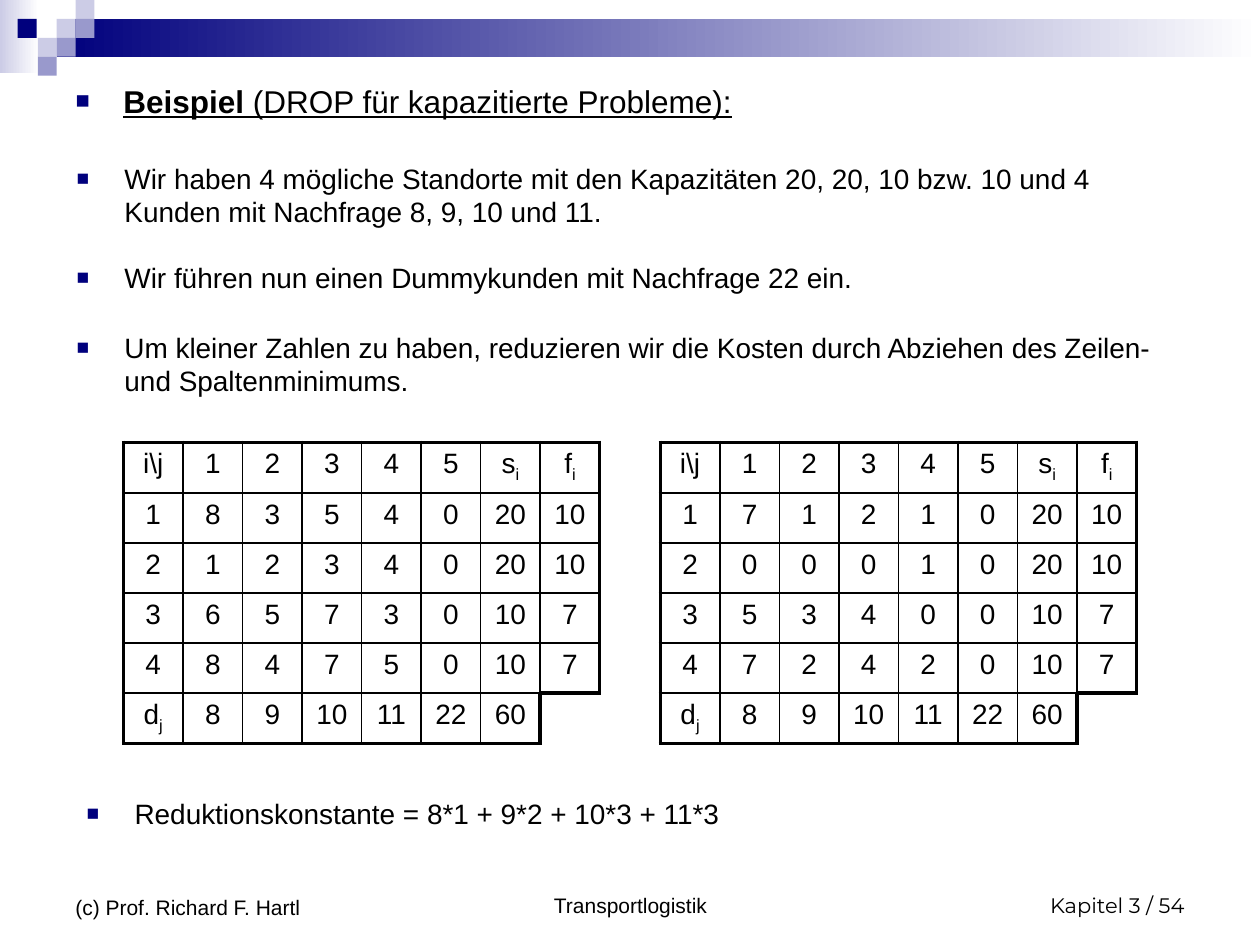
import dataclasses

import lxml.etree
import pptx
import pptx.dml.color
import pptx.enum.shapes
import pptx.enum.text
import pptx.oxml.ns
import pptx.util

Inches = pptx.util.Inches
ALIGN = pptx.enum.text.PP_ALIGN
ANCHOR = pptx.enum.text.MSO_ANCHOR


@dataclasses.dataclass(frozen=True)
class Theme:
    ink: str = "000000"
    navy: str = "00007D"
    violet: str = "9999CC"
    lilac: str = "CCCCE6"
    white: str = "FFFFFF"
    font: str = "Arial"
    number_font: str = "Montserrat"
    heading_size: int = 18
    body_size: int = 16
    footer_size: int = 12
    thick: float = 2.25
    thin: float = 1


def rgb(color):
    return pptx.dml.color.RGBColor.from_string(color)


def add_xml(parent, tag, **attributes):
    return lxml.etree.SubElement(parent, pptx.oxml.ns.qn(tag), attributes)


def apply_formats(target, values):
    for attribute, value in values.items():
        setattr(target, attribute, value)


class SlideBuilder:
    def __init__(self, slide, theme):
        self.slide = slide
        self.theme = theme

    def add_text(self, paragraph, text, size, font=None, subscript=False, **formats):
        run = paragraph.add_run()
        run.text = text
        run.font.color.rgb = rgb(self.theme.ink)
        apply_formats(run.font, {"name": font or self.theme.font,
                                 "size": pptx.util.Pt(size), **formats})
        if subscript:
            run.font._element.set("baseline", "-25000")

    def space_before(self, paragraph):
        spacing = add_xml(paragraph._p.get_or_add_pPr(), "a:spcBef")
        add_xml(spacing, "a:spcPct", val="20000")

    def bullet(self, paragraph):
        properties = paragraph._p.get_or_add_pPr()
        indent = Inches(0.38)
        properties.set("marL", str(indent))
        properties.set("indent", str(-indent))
        self.space_before(paragraph)
        color = add_xml(properties, "a:buClr")
        add_xml(color, "a:srgbClr", val=self.theme.navy)
        add_xml(properties, "a:buSzPct", val="75000")
        add_xml(properties, "a:buFont", typeface=self.theme.font)
        add_xml(properties, "a:buChar", char="■")

    def block(self, color, left, top, width, height, fade=False):
        block = self.slide.shapes.add_shape(
            pptx.enum.shapes.MSO_SHAPE.RECTANGLE,
            Inches(left), Inches(top), Inches(width), Inches(height))
        block.shadow.inherit = False
        block.line.fill.background()
        if fade:
            block.fill.gradient()
            block.fill.gradient_angle = 0
            for stop, shade, position in zip(
                    block.fill.gradient_stops, (color, self.theme.white), (0, 1)):
                stop.color.rgb = rgb(shade)
                stop.position = position
        else:
            block.fill.solid()
            block.fill.fore_color.rgb = rgb(color)

    def heading(self, strong, rest, left, top, width, height):
        title = self.slide.shapes.title
        apply_formats(title, {"left": Inches(left), "top": Inches(top),
                              "width": Inches(width), "height": Inches(height)})
        apply_formats(title.text_frame, {
            "vertical_anchor": ANCHOR.TOP, "word_wrap": True,
            "auto_size": pptx.enum.text.MSO_AUTO_SIZE.NONE})
        paragraph = title.text_frame.paragraphs[0]
        paragraph.alignment = ALIGN.LEFT
        self.bullet(paragraph)
        for text, bold in ((strong, True), (rest, False)):
            self.add_text(paragraph, text, self.theme.heading_size, bold=bold, underline=True)

    def text_box(self, left, top, width, height, anchor, align):
        box = self.slide.shapes.add_textbox(
            Inches(left), Inches(top), Inches(width), Inches(height))
        apply_formats(box.text_frame, {"word_wrap": True, "vertical_anchor": anchor})
        paragraph = box.text_frame.paragraphs[0]
        paragraph.alignment = align
        return paragraph

    def statement(self, text, left, top, height):
        paragraph = self.text_box(left, top, 9, height, ANCHOR.TOP, ALIGN.LEFT)
        self.bullet(paragraph)
        self.add_text(paragraph, text, self.theme.body_size)

    def footer(self, text, left, width, height, align, font=None):
        paragraph = self.text_box(left, 6.83, width, height, ANCHOR.BOTTOM, align)
        self.add_text(paragraph, text, self.theme.footer_size, font)

    def border(self, cell, widths):
        properties = cell._tc.get_or_add_tcPr()
        for side, width in zip("LRTB", widths):
            line = add_xml(properties, f"a:ln{side}", w=str(pptx.util.Pt(width)))
            if width:
                fill = add_xml(line, "a:solidFill")
                add_xml(fill, "a:srgbClr", val=self.theme.ink)
            else:
                add_xml(line, "a:noFill")

    def cost_table(self, rows, left, top, width, height):
        row_count, column_count = len(rows), len(rows[0])
        table = self.slide.shapes.add_table(
            row_count, column_count, Inches(left), Inches(top),
            Inches(width), Inches(height)).table
        apply_formats(table, {"first_row": False, "horz_banding": False})
        last_row, last_column = row_count - 1, column_count - 1
        thick, thin = self.theme.thick, self.theme.thin
        for r, row in enumerate(rows):
            for c, label in enumerate(row):
                cell = table.cell(r, c)
                right_edge = c == last_column or (r, c) == (last_row, last_column - 1)
                bottom_edge = r == last_row or (r, c) == (last_row - 1, last_column)
                if (r, c) == (last_row, last_column):
                    widths = (thick, 0, thick, 0)
                else:
                    widths = [thick if edge else thin
                              for edge in (c == 0, right_edge, r == 0, bottom_edge)]
                self.border(cell, widths)
                cell.fill.background()
                paragraph = cell.text_frame.paragraphs[0]
                paragraph.alignment = ALIGN.CENTER
                self.space_before(paragraph)
                base, _, index = str(label).partition("_")
                if base:
                    self.add_text(paragraph, base, self.theme.body_size)
                if index:
                    self.add_text(paragraph, index, self.theme.body_size, subscript=True)


def with_margins(costs):
    supplies, fixed_costs = (20, 20, 10, 10), (10, 10, 7, 7)
    header = ["i\\j", 1, 2, 3, 4, 5, "s_i", "f_i"]
    sites = [[i, *row, s, f] for i, (row, s, f)
             in enumerate(zip(costs, supplies, fixed_costs), 1)]
    return [header, *sites, ["d_j", 8, 9, 10, 11, 22, 60, ""]]


def main():
    deck = pptx.Presentation()
    apply_formats(deck, {"slide_width": Inches(10), "slide_height": Inches(7.5)})
    theme = Theme()
    builder = SlideBuilder(deck.slides.add_slide(deck.slide_layouts[5]), theme)

    builder.block(theme.lilac, 0, 0, 0.31, 0.58, fade=True)
    builder.block(theme.navy, 0.45, 0.15, 9.55, 0.3, fade=True)
    tile = 0.15
    for color, left, top in (
            (theme.lilac, 0.45, 0.15), (theme.lilac, 0.6, 0), (theme.violet, 0.6, 0.15),
            (theme.lilac, 0.3, 0.3), (theme.navy, 0.14, 0.15),
            (theme.violet, 0.45, 0.3), (theme.violet, 0.3, 0.45)):
        builder.block(color, left, top, tile, tile)

    builder.footer("Transportlogistik", 3.42, 3.17, 0.5, ALIGN.CENTER)
    builder.footer("Kapitel 3 / 54", 7.17, 2.33, 0.5, ALIGN.RIGHT, theme.number_font)
    builder.footer("(c) Prof. Richard F. Hartl", 0.5, 2.33, 0.52, ALIGN.LEFT)

    builder.heading("Beispiel", " (DROP für kapazitierte Probleme):", 0.5, 0.6, 9, 0.47)
    for text, left, top, height in (
            ("Wir haben 4 mögliche Standorte mit den Kapazitäten 20, 20, 10 bzw. 10 "
             "und 4 Kunden mit Nachfrage 8, 9, 10 und 11.", 0.51, 1.23, 0.71),
            ("Wir führen nun einen Dummykunden mit Nachfrage 22 ein.", 0.51, 2.02, 0.47),
            ("Um kleiner Zahlen zu haben, reduzieren wir die Kosten durch Abziehen "
             "des Zeilen- und Spaltenminimums.", 0.51, 2.57, 0.71),
            ("Reduktionskonstante = 8*1 + 9*2 + 10*3 + 11*3", 0.59, 6.27, 0.47)):
        builder.statement(text, left, top, height)

    initial_costs = ((8, 3, 5, 4, 0), (1, 2, 3, 4, 0), (6, 5, 7, 3, 0), (8, 4, 7, 5, 0))
    reduced_costs = ((7, 1, 2, 1, 0), (0, 0, 0, 1, 0), (5, 3, 4, 0, 0), (7, 2, 4, 2, 0))
    for costs, left in ((initial_costs, 0.98), (reduced_costs, 5.24)):
        builder.cost_table(with_margins(costs), left, 3.51, 3.78, 2.38)

    deck.save("out.pptx")


if __name__ == "__main__":
    main()
